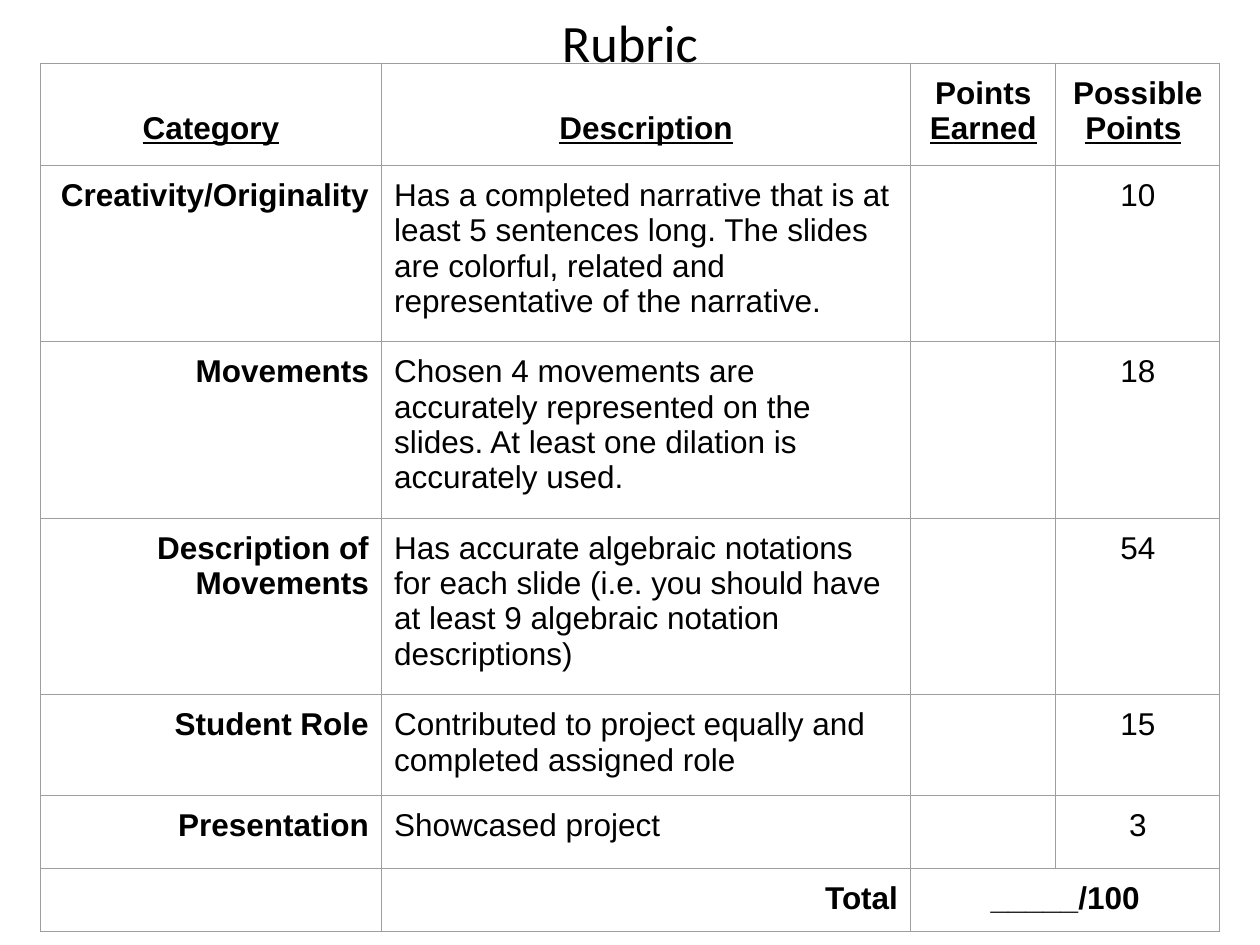
import pptx
import pptx.dml.color
import pptx.enum.text
import pptx.oxml
import pptx.oxml.ns
import pptx.util

Pt = pptx.util.Pt
ALIGN = pptx.enum.text.PP_ALIGN
ANCHOR = pptx.enum.text.MSO_ANCHOR
BLACK = pptx.dml.color.RGBColor(0x00, 0x00, 0x00)
GREY = pptx.dml.color.RGBColor(0x9E, 0x9E, 0x9E)

INSET = 7.2
LINE = 20.1
COLS = [195, 302.4, 83, 93.6]
ROWS = [58.3, 94.9, 94.9, 94.9, 54.9, 41.8, 35.3]
HEADERS = [
    [("Category", True)],
    [("Description", True)],
    [("Points ", False), ("Earned", True)],
    [("Possible ", False), ("Points", True), (" ", False)],
]
CRITERIA = [
    ("Creativity/Originality", "Has a completed narrative that is at least 5 sentences long. "
     "The slides are colorful, related and representative of the narrative.", "10"),
    ("Movements", "Chosen 4 movements are accurately represented on the slides. "
     "At least one dilation is accurately used.", "18"),
    ("Description of Movements", "Has accurate algebraic notations for each slide "
     "(i.e. you should have at least 9 algebraic notation descriptions)", "54"),
    ("Student Role", "Contributed to project equally and completed assigned role", "15"),
    ("Presentation", "Showcased project", "3"),
]


class RubricSlide:
    """Hold the text style and the slide, and add elements to it."""

    def __init__(self, prs):
        self.slide = prs.slides.add_slide(prs.slide_layouts[6])
        self.style = {"name": "Arial", "size": Pt(18), "bold": False, "underline": False}

    def add_text(self, tf, runs, align, **formats):
        p = tf.paragraphs[0]
        p.alignment = align
        for text, underline in runs:
            r = p.add_run()
            r.text = text
            for key, value in {**self.style, "underline": underline, **formats}.items():
                setattr(r.font, key, value)
            r.font.color.rgb = BLACK

    def title(self, text, left, top, width, height):
        sp = self.slide.shapes.add_textbox(Pt(left), Pt(top), Pt(width), Pt(height))
        tf = sp.text_frame
        formats = {"word_wrap": True, "vertical_anchor": ANCHOR.TOP, "margin_left": 0,
                   "margin_right": 0, "margin_top": 0, "margin_bottom": 0}
        for key, value in formats.items():
            setattr(tf, key, value)
        self.add_text(tf, [(text, False)], ALIGN.CENTER, name="Calibri", size=Pt(30))

    def table(self, left, top, cols, rows):
        frame = self.slide.shapes.add_table(len(rows), len(cols), Pt(left), Pt(top),
                                            Pt(sum(cols)), Pt(sum(rows)))
        table = frame.table
        table.first_row = table.horz_banding = False
        for col, width in zip(table.columns, cols):
            col.width = Pt(width)
        for row, height in zip(table.rows, rows):
            row.height = Pt(height)
        for cell in table.iter_cells():
            self.border(cell)
            cell.fill.background()
            for side in ("left", "right", "top", "bottom"):
                setattr(cell, f"margin_{side}", Pt(INSET))
        return table

    def border(self, cell):
        tc_pr = cell._tc.get_or_add_tcPr()
        for side in ("lnL", "lnR", "lnT", "lnB"):
            tc_pr.append(pptx.oxml.parse_xml(
                f'<a:{side} {pptx.oxml.ns.nsdecls("a")} w="{Pt(0.75)}"><a:solidFill>'
                f'<a:srgbClr val="{GREY}"/></a:solidFill></a:{side}>'))

    def cell(self, cell, runs, align, bold=False):
        self.add_text(cell.text_frame, runs, align, bold=bold)


def main():
    prs = pptx.Presentation()
    prs.slide_width, prs.slide_height = Pt(720), Pt(540)
    s = RubricSlide(prs)
    s.title("Rubric", 36, 5.76, 648, 30)
    table = s.table(23, 36.2, COLS, ROWS)
    for col, runs in enumerate(HEADERS):
        s.cell(table.cell(0, col), runs, ALIGN.CENTER, bold=True)
        if len(runs) == 1:
            table.cell(0, col).margin_top = Pt(INSET + LINE)
    for row, (category, description, points) in enumerate(CRITERIA, 1):
        s.cell(table.cell(row, 0), [(category, False)], ALIGN.RIGHT, bold=True)
        s.cell(table.cell(row, 1), [(description, False)], ALIGN.LEFT)
        s.cell(table.cell(row, 3), [(points, False)], ALIGN.CENTER)
    last = len(ROWS) - 1
    table.cell(last, 2).merge(table.cell(last, 3))
    s.cell(table.cell(last, 1), [("Total", False)], ALIGN.RIGHT, bold=True)
    s.cell(table.cell(last, 2), [("_____/100", False)], ALIGN.CENTER, bold=True)
    prs.save("out.pptx")


if __name__ == "__main__":
    main()
